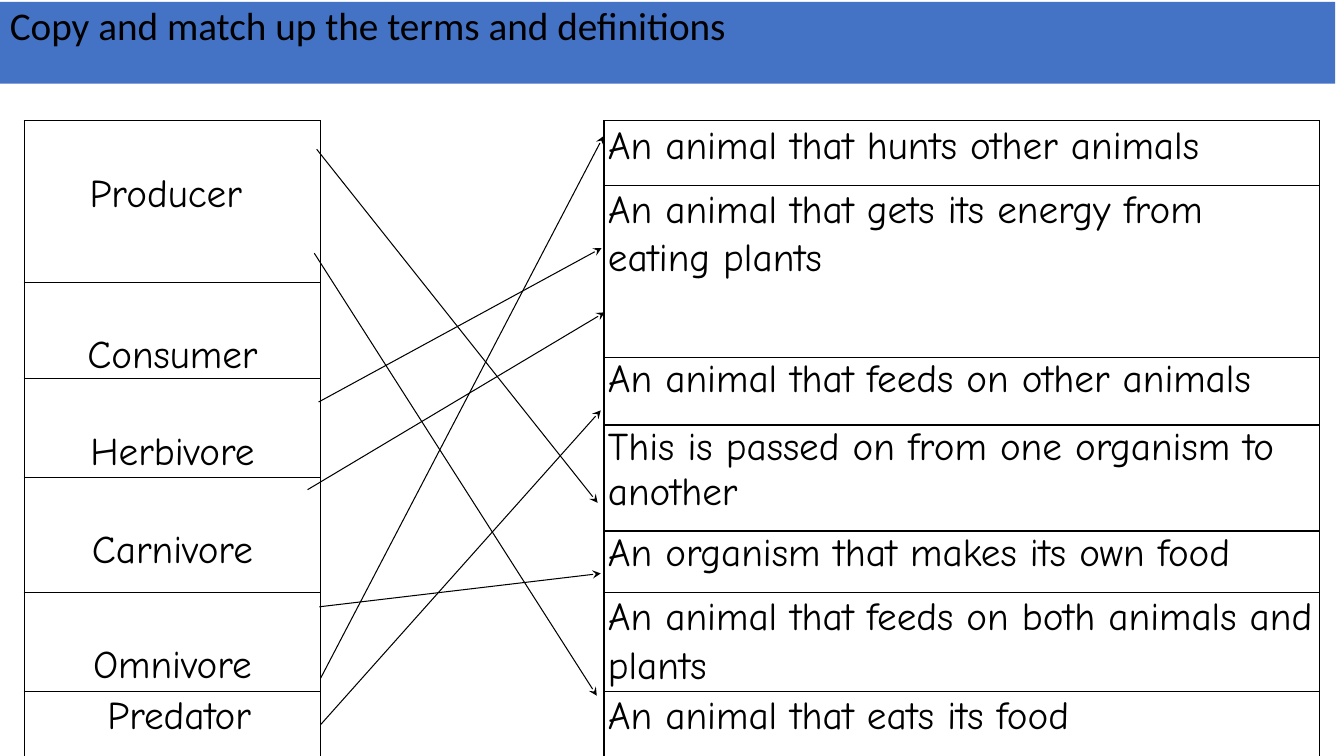
from lxml.etree import SubElement
from pptx import Presentation
from pptx.dml.color import RGBColor
from pptx.enum.shapes import MSO_CONNECTOR, MSO_SHAPE
from pptx.enum.text import MSO_ANCHOR, PP_ALIGN
from pptx.oxml import parse_xml
from pptx.oxml.ns import qn
from pptx.util import Cm, Pt

TITLE = "Copy and match up the terms and definitions"
COLORS = {"ink": "000000", "bar": "4472C4"}
# text, first row, rows spanned, margins left, top, right (cm)
SIDE, SHIFT, LINE = 0.1, 0.44, 1.21
TERMS = [
    ("Producer", 0, 2, SIDE, LINE, SHIFT),
    ("Consumer", 2, 2, SIDE, LINE, SIDE),
    ("Herbivore", 4, 2, SIDE, LINE, SIDE),
    ("Carnivore", 6, 2, SIDE, LINE, SIDE),
    ("Omnivore", 8, 1, SIDE, LINE, SIDE),
    ("Predator", 9, 1, SHIFT, 0, SIDE),
]
# text, first row, rows spanned, line spacing
DEFINITIONS = [
    ("An animal that hunts other animals", 0, 1, 1.07),
    ("An animal that gets its energy from eating plants", 1, 2, 1.07),
    ("An animal that feeds on other animals", 3, 2, 1.0),
    ("This is passed on from one organism to another", 5, 2, 1.0),
    ("An organism that makes its own food", 7, 1, 1.0),
    ("An animal that feeds on both animals and plants", 8, 1, 1.07),
    ("An animal that eats its food", 9, 1, 1.07),
]
COLUMNS = [7.47, 7.14, 18.03]
ROWS = [1.63, 2.44, 1.9, 0.53, 1.17, 1.32, 1.35, 1.55, 2.49, 1.73]
TABLE_LEFT, TABLE_TOP = 0.61, 3.04
# start x, start y, end x, end y (cm)
ARROWS = [
    (7.98, 3.76, 15.06, 12.67),
    (7.92, 6.38, 15.04, 17.53),
    (8.08, 18.26, 15.14, 10.34),
    (8.08, 17.09, 15.21, 3.43),
    (8.03, 10.13, 15.16, 6.25),
    (8.05, 15.29, 15.14, 14.45),
    (7.75, 12.34, 15.24, 7.87),
]
NS = 'xmlns:a="http://schemas.openxmlformats.org/drawingml/2006/main"'


def rgb(name):
    return RGBColor.from_string(COLORS[name])


def style_paragraph(p, font, align, spacing):
    p.alignment = align
    p.line_spacing = spacing
    p.font.name = font
    p.font.size = Pt(28)
    p.font.color.rgb = rgb("ink")


def set_borders(cell, visible):
    """Draw the sides named in visible (of L, R, T, B) and clear the others."""
    tc_pr = cell._tc.get_or_add_tcPr()
    solid = f'<a:solidFill><a:srgbClr val="{COLORS["ink"]}"/></a:solidFill>'
    for i, side in enumerate("LRTB"):
        paint = solid if side in visible else "<a:noFill/>"
        line = f'<a:ln{side} {NS} w="{Pt(1)}">{paint}</a:ln{side}>'
        tc_pr.insert(i, parse_xml(line))


def fill_cell(table, col, text, row, span, align, spacing, margins):
    cell = table.cell(row, col)
    if span > 1:
        cell.merge(table.cell(row + span - 1, col))
    left, top, right = margins
    cell.margin_left, cell.margin_top = Cm(left), Cm(top)
    cell.margin_right, cell.margin_bottom = Cm(right), 0
    cell.text = text
    style_paragraph(cell.text_frame.paragraphs[0], "Comic Neue", align, spacing)


def add_matching_table(slide):
    table = slide.shapes.add_table(
        len(ROWS), len(COLUMNS), Cm(TABLE_LEFT), Cm(TABLE_TOP),
        Cm(sum(COLUMNS)), Cm(sum(ROWS))).table
    table.first_row = table.horz_banding = False
    for column, width in zip(table.columns, COLUMNS):
        column.width = Cm(width)
    for row, height in zip(table.rows, ROWS):
        row.height = Cm(height)
        for cell, sides in zip(row.cells, ("LRTB", "LR", "LRTB")):
            cell.margin_top = cell.margin_bottom = 0
            cell.fill.background()
            set_borders(cell, sides)
    table.cell(0, 1).merge(table.cell(len(ROWS) - 1, 1))
    for text, row, span, *margins in TERMS:
        fill_cell(table, 0, text, row, span, PP_ALIGN.CENTER, 1.07, margins)
    for text, row, span, spacing in DEFINITIONS:
        fill_cell(table, 2, text, row, span, PP_ALIGN.LEFT, spacing, (SIDE, 0, SIDE))


def add_arrow(slide, ends):
    arrow = slide.shapes.add_connector(MSO_CONNECTOR.STRAIGHT, *map(Cm, ends))
    arrow.line.color.rgb = rgb("ink")
    arrow.line.width = Pt(0.75)
    SubElement(arrow.line._get_or_add_ln(), qn("a:tailEnd"), type="stealth")
    SubElement(arrow._element.spPr, qn("a:effectLst"))


def add_title_bar(slide):
    sp = slide.shapes.add_shape(
        MSO_SHAPE.RECTANGLE, 0, Cm(0.05), Cm(33.65), Cm(2.06))
    sp.shadow.inherit = False
    sp.fill.solid()
    sp.fill.fore_color.rgb = rgb("bar")
    sp.line.fill.background()
    tf = sp.text_frame
    tf.word_wrap = True
    tf.vertical_anchor = MSO_ANCHOR.TOP
    tf.text = TITLE
    style_paragraph(tf.paragraphs[0], "Calibri", PP_ALIGN.LEFT, 0.9)


def main():
    prs = Presentation()
    prs.slide_width, prs.slide_height = Cm(33.87), Cm(19.05)
    slide = prs.slides.add_slide(prs.slide_layouts[6])
    add_matching_table(slide)
    for ends in ARROWS:
        add_arrow(slide, ends)
    add_title_bar(slide)
    prs.save("out.pptx")


if __name__ == "__main__":
    main()
